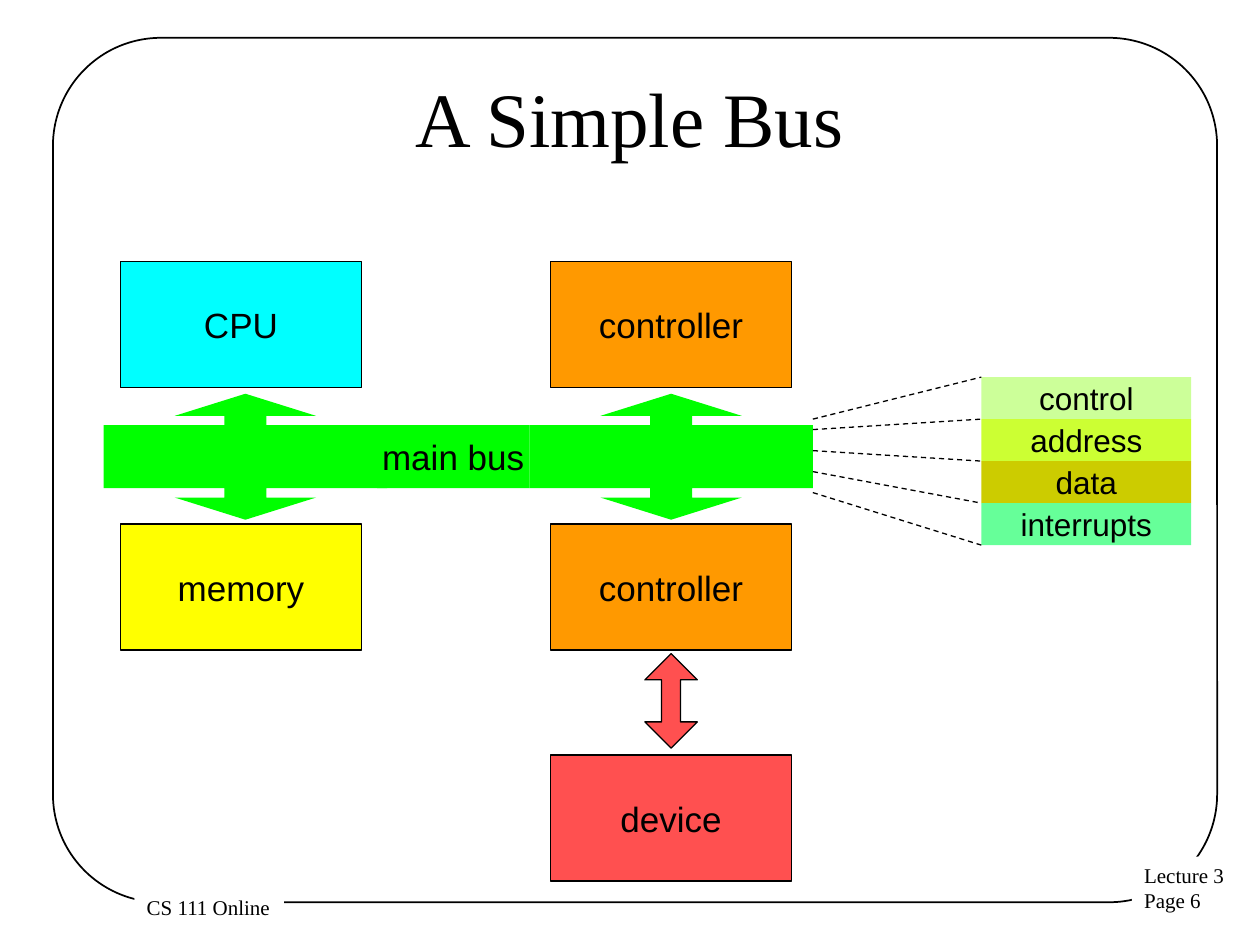
"""Build a slide that shows a simple bus between processor, memory and controllers."""
import dataclasses

import pptx
import pptx.dml.color
import pptx.enum.dml
import pptx.enum.shapes
import pptx.enum.text
import pptx.oxml
import pptx.util

Pt = pptx.util.Pt
Kind = pptx.enum.shapes.MSO_SHAPE
Align = pptx.enum.text.PP_ALIGN
Anchor = pptx.enum.text.MSO_ANCHOR
Fit = pptx.enum.text.MSO_AUTO_SIZE


@dataclasses.dataclass(frozen=True)
class Theme:
    """Colours, fonts and type sizes."""
    ink: str = "000000"
    paper: str = "FFFFFF"
    bus: str = "00FF00"
    cpu: str = "00FFFF"
    memory: str = "FFFF00"
    control: str = "FF9900"
    device: str = "FF5050"
    lanes: tuple = ("CCFF99", "CCFF33", "CCCC00", "66FF99")
    serif: str = "Times New Roman"
    sans: str = "Arial"
    title: int = 44
    body: int = 20
    lane: int = 18
    foot: int = 12


THEME = Theme()


def color(code):
    """Turn a hex code into a colour."""
    return pptx.dml.color.RGBColor.from_string(code)


def write(para, text, size, font, align):
    """Add one run of text to a paragraph."""
    para.alignment = align
    run = para.add_run()
    run.text = text
    run.font.size = Pt(size)
    run.font.name = font
    run.font.color.rgb = color(THEME.ink)


def shape(slide, kind, box, fill=None, line=None, adjust=()):
    """Add a preset shape with plain fill and line."""
    item = slide.shapes.add_shape(kind, *map(Pt, box))
    item.shadow.inherit = False
    for index, value in enumerate(adjust):
        item.adjustments[index] = value
    if fill:
        item.fill.solid()
        item.fill.fore_color.rgb = color(fill)
    else:
        item.fill.background()
    if line:
        item.line.color.rgb = color(THEME.ink)
        item.line.width = Pt(line)
    else:
        item.line.fill.background()
    return item


def block(slide, text, box, fill, size=THEME.body, line=None):
    """Add a filled rectangle with a centred label."""
    frame = shape(slide, Kind.RECTANGLE, box, fill, line).text_frame
    frame.word_wrap = False
    frame.vertical_anchor = Anchor.MIDDLE
    write(frame.paragraphs[0], text, size, THEME.sans, Align.CENTER)


def foot(slide, lines, box):
    """Add a footer label that covers the frame line."""
    frame = shape(slide, Kind.RECTANGLE, box, THEME.paper).text_frame
    frame.word_wrap = False
    frame.auto_size = Fit.SHAPE_TO_FIT_TEXT
    frame.vertical_anchor = Anchor.TOP
    for index, text in enumerate(lines):
        para = frame.add_paragraph() if index else frame.paragraphs[0]
        write(para, text, THEME.foot, THEME.serif, Align.LEFT)


def head(slide, text):
    """Place and format the slide title."""
    title = slide.shapes.title
    title.left, title.top, title.width, title.height = map(Pt, (36, 21.6, 648, 90))
    title.text_frame.vertical_anchor = Anchor.MIDDLE
    write(title.text_frame.paragraphs[0], text, THEME.title, THEME.serif, Align.CENTER)


def dash(slide, start, end):
    """Add a thin dashed line."""
    line = slide.shapes.add_connector(
        pptx.enum.shapes.MSO_CONNECTOR.STRAIGHT, *map(Pt, start + end))
    line.line.color.rgb = color(THEME.ink)
    line.line.width = Pt(0.75)
    line.line.dash_style = pptx.enum.dml.MSO_LINE.DASH
    line._element.spPr.append(pptx.oxml.parse_xml(
        '<a:effectLst xmlns:a="http://schemas.openxmlformats.org/drawingml/2006/main"/>'))


def bus(slide):
    """Draw the bus with its two double arrows."""
    for left in (59.25, 302.5):
        shape(slide, Kind.UP_DOWN_ARROW_CALLOUT, (left, 225, 162, 72), THEME.bus,
              adjust=(0.333, 0.562, 0.176, 0.5))
    block(slide, "main bus", (215.5, 243, 87, 36), THEME.bus)


def parts(slide):
    """Draw the parts joined by the bus."""
    near, far = 68.75, 314.5
    high, low, base = 149.5, 299.5, 431.5
    for text, left, top, fill in (
            ("controller", far, high, THEME.control),
            ("controller", far, low, THEME.control),
            ("device", far, base, THEME.device),
            ("CPU", near, high, THEME.cpu),
            ("memory", near, low, THEME.memory)):
        block(slide, text, (left, top, 138, 72), fill, line=0.75)
    shape(slide, Kind.UP_DOWN_ARROW, (368.5, 373.5, 30, 54), THEME.device, 0.75,
          (0.5, 0.36))


def lanes(slide):
    """Draw the bus lanes and the lines that fan out to them."""
    left, top, step = 560.75, 215.5, 24
    names = ("control", "address", "data", "interrupts")
    for index, (text, fill) in enumerate(zip(names, THEME.lanes)):
        block(slide, text, (left, top + index * step, 120, step), fill, THEME.lane)
    for index, start in enumerate((239.5, 245.5, 257.5, 269.5, 281.5)):
        dash(slide, (464.5, start), (left, top + index * step))


def main():
    """Build and save the slide."""
    deck = pptx.Presentation()
    deck.slide_width, deck.slide_height = Pt(720), Pt(540)
    slide = deck.slides.add_slide(deck.slide_layouts.get_by_name("Title Only"))
    shape(slide, Kind.ROUNDED_RECTANGLE, (30.25, 21.6, 665.25, 494), line=1,
          adjust=(0.125,))
    foot(slide, ("Lecture 3", "Page 6"), (646.75, 489.5, 60.5, 36.5))
    foot(slide, ("CS 111 Online",), (76.75, 507.5, 85.5, 21.75))
    head(slide, "A Simple Bus")
    bus(slide)
    parts(slide)
    lanes(slide)
    deck.save("out.pptx")


if __name__ == "__main__":
    main()
